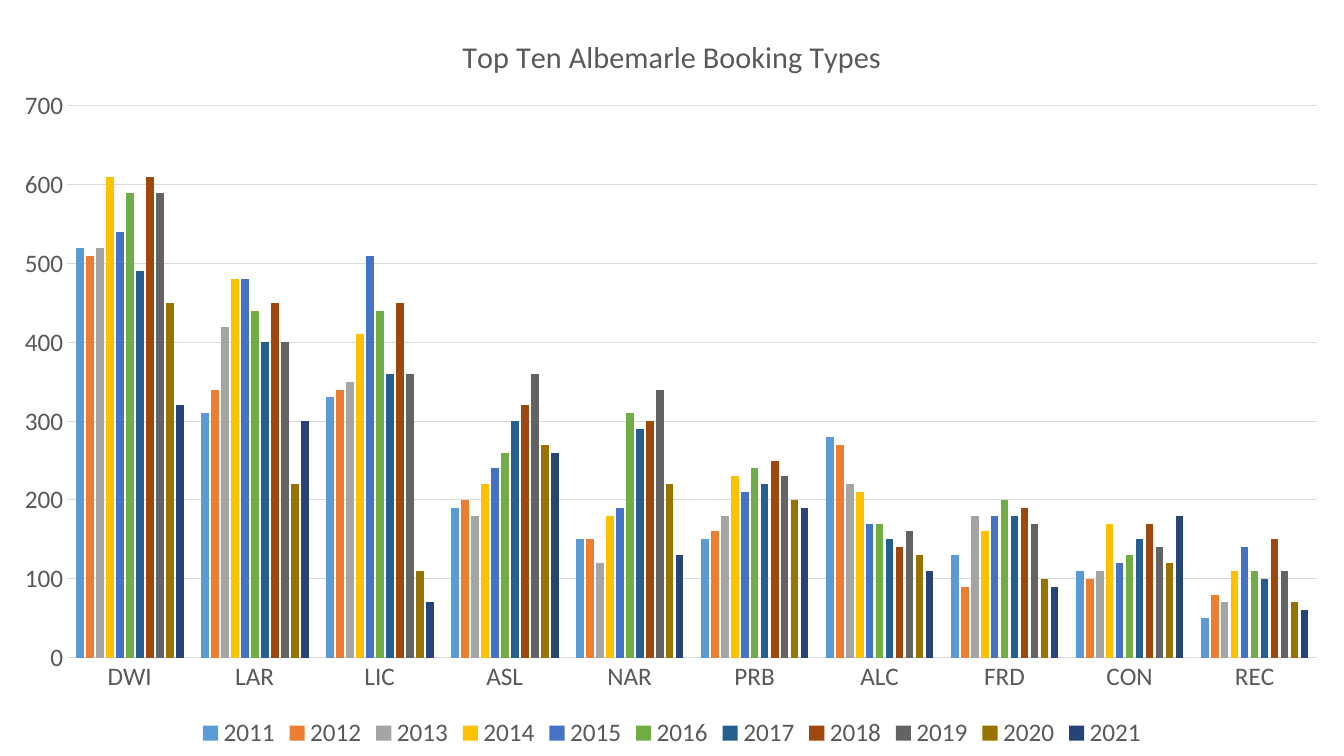
"""Build a slide with a clustered column chart of booking types by year."""
from dataclasses import dataclass
from typing import NamedTuple

from lxml.etree import SubElement
from pptx import Presentation
from pptx.chart.chart import Chart
from pptx.chart.data import CategoryChartData
from pptx.dml.color import RGBColor
from pptx.enum.chart import XL_CHART_TYPE as ChartType
from pptx.enum.chart import XL_LEGEND_POSITION as LegendPosition
from pptx.enum.chart import XL_TICK_MARK as TickMark
from pptx.oxml.ns import qn
from pptx.util import Inches, Pt


@dataclass(frozen=True)
class Theme:
    font: str = "Calibri"
    text: str = "595959"
    rule: str = "D9D9D9"
    title_size: float = 21.6
    label_size: float = 18
    rule_width: float = 0.75


class Year(NamedTuple):
    name: str
    color: str
    bookings: tuple[int, ...]


class Area(NamedTuple):
    x: float
    y: float
    w: float | None = None
    h: float | None = None


THEME = Theme()
WIDTH, HEIGHT = Inches(13.33), Inches(7.5)
TITLE = "Top Ten Albemarle Booking Types"
TITLE_AREA = Area(0.34, 0.04)
PLOT_AREA = Area(0.05, 0.14, 0.93, 0.73)
LEGEND_AREA = Area(0.14, 0.95, 0.72, 0.05)
BOOKING_TYPES = ("DWI", "LAR", "LIC", "ASL", "NAR", "PRB", "ALC", "FRD", "CON", "REC")
YEARS = (
    Year("2011", "5B9BD5", (520, 310, 330, 190, 150, 150, 280, 130, 110, 50)),
    Year("2012", "ED7D31", (510, 340, 340, 200, 150, 160, 270, 90, 100, 80)),
    Year("2013", "A5A5A5", (520, 420, 350, 180, 120, 180, 220, 180, 110, 70)),
    Year("2014", "FFC000", (610, 480, 410, 220, 180, 230, 210, 160, 170, 110)),
    Year("2015", "4472C4", (540, 480, 510, 240, 190, 210, 170, 180, 120, 140)),
    Year("2016", "70AD47", (590, 440, 440, 260, 310, 240, 170, 200, 130, 110)),
    Year("2017", "255E91", (490, 400, 360, 300, 290, 220, 150, 180, 150, 100)),
    Year("2018", "9E480E", (610, 450, 450, 320, 300, 250, 140, 190, 170, 150)),
    Year("2019", "636363", (590, 400, 360, 360, 340, 230, 160, 170, 140, 110)),
    Year("2020", "997300", (450, 220, 110, 270, 220, 200, 130, 100, 120, 70)),
    Year("2021", "264478", (320, 300, 70, 260, 130, 190, 110, 90, 180, 60)),
)


def style_font(font, size: float) -> None:
    """Apply the theme font and text colour."""
    font.name, font.size, font.bold = THEME.font, Pt(size), False
    font.color.rgb = RGBColor.from_string(THEME.text)


def style_rule(line) -> None:
    """Apply the theme's thin grey line."""
    line.color.rgb = RGBColor.from_string(THEME.rule)
    line.width = Pt(THEME.rule_width)


def place(part, area: Area, index: int, inner: bool = False) -> None:
    """Fix a chart part at fractions of the chart's size."""
    for previous in part.findall(qn("c:layout")):
        part.remove(previous)
    layout = SubElement(part, qn("c:layout"))
    part.insert(index, layout)
    manual = SubElement(layout, qn("c:manualLayout"))
    if inner:
        SubElement(manual, qn("c:layoutTarget"), val="inner")
    for mode in ("xMode", "yMode"):
        SubElement(manual, qn(f"c:{mode}"), val="edge")
    for side, fraction in area._asdict().items():
        if fraction is not None:
            SubElement(manual, qn(f"c:{side}"), val=str(fraction))


def add_bookings(slide) -> Chart:
    """Add the chart and colour one series for each year."""
    bookings = CategoryChartData(number_format="General")
    bookings.categories = BOOKING_TYPES
    for year in YEARS:
        bookings.add_series(year.name, year.bookings)
    chart = slide.shapes.add_chart(
        ChartType.COLUMN_CLUSTERED, 0, 0, WIDTH, HEIGHT, bookings
    ).chart
    style_font(chart.font, THEME.label_size)
    columns = chart.plots[0]
    columns.gap_width, columns.overlap = 219, -27
    columns.vary_by_categories = False
    for series, year in zip(columns.series, YEARS):
        series.invert_if_negative = False
        series.format.fill.solid()
        series.format.fill.fore_color.rgb = RGBColor.from_string(year.color)
    place(chart._chartSpace.chart.plotArea, PLOT_AREA, 0, inner=True)
    return chart


def style_axes(chart: Chart) -> None:
    """Style both axes and the gridlines."""
    for axis in (chart.category_axis, chart.value_axis):
        axis.major_tick_mark = axis.minor_tick_mark = TickMark.NONE
        style_font(axis.tick_labels.font, THEME.label_size)
    style_rule(chart.category_axis.format.line)
    counts = chart.value_axis
    counts.minimum_scale, counts.maximum_scale, counts.major_unit = 0, 700, 100
    counts.format.line.fill.background()
    style_rule(counts.major_gridlines.format.line)


def add_title_and_legend(chart: Chart) -> None:
    """Add the heading above and the list of years below."""
    heading = chart.chart_title
    heading.text_frame.text = TITLE
    style_font(heading.text_frame.paragraphs[0].runs[0].font, THEME.title_size)
    heading.include_in_layout = False
    place(heading._element, TITLE_AREA, 1)
    chart.has_legend = True
    chart.legend.position = LegendPosition.BOTTOM
    chart.legend.include_in_layout = False
    style_font(chart.legend.font, THEME.label_size)
    place(chart.legend._element, LEGEND_AREA, 1)


def main() -> None:
    """Build and save the presentation."""
    deck = Presentation()
    deck.slide_width, deck.slide_height = WIDTH, HEIGHT
    chart = add_bookings(deck.slides.add_slide(deck.slide_layouts[6]))
    style_axes(chart)
    add_title_and_legend(chart)
    deck.save("out.pptx")


if __name__ == "__main__":
    main()
